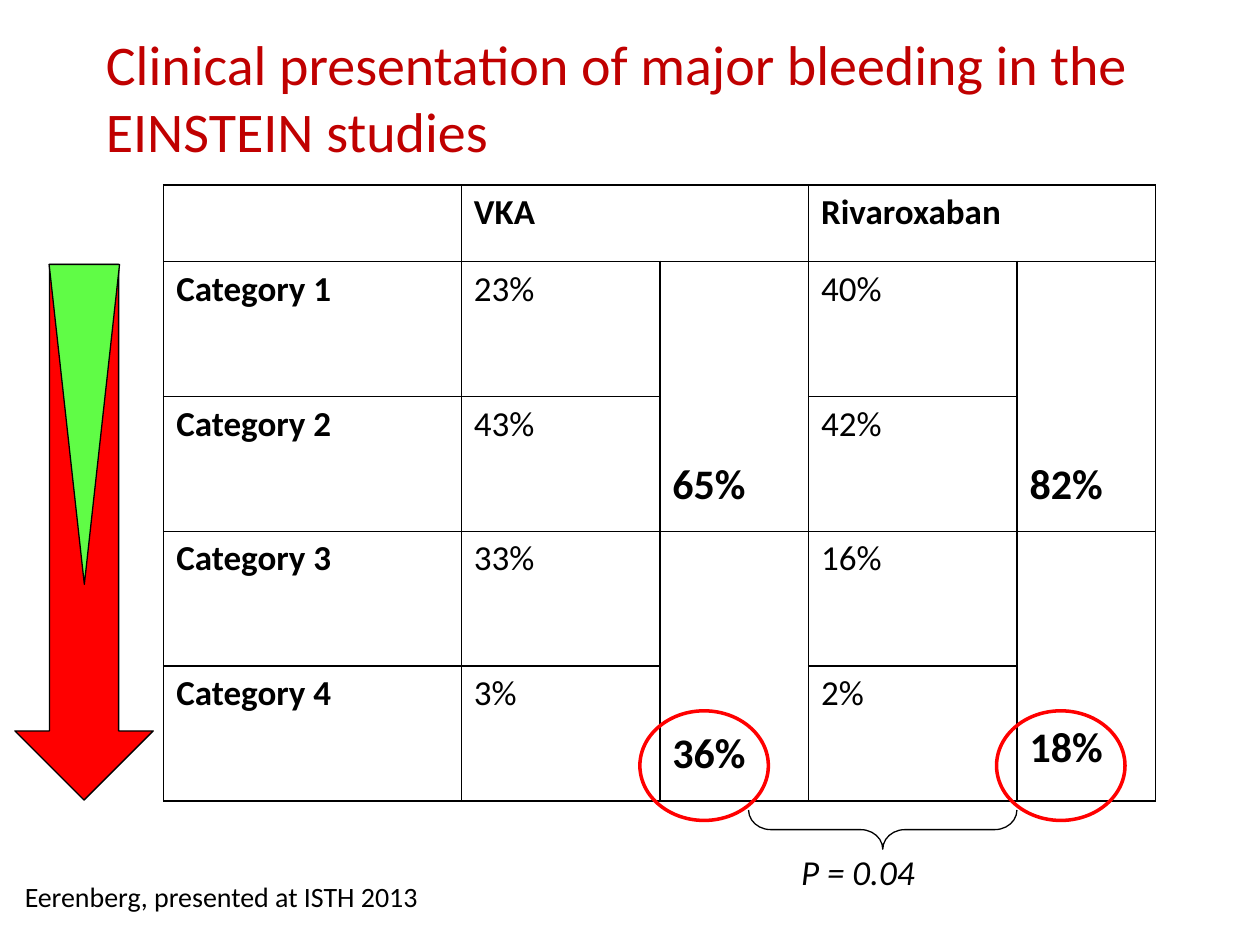
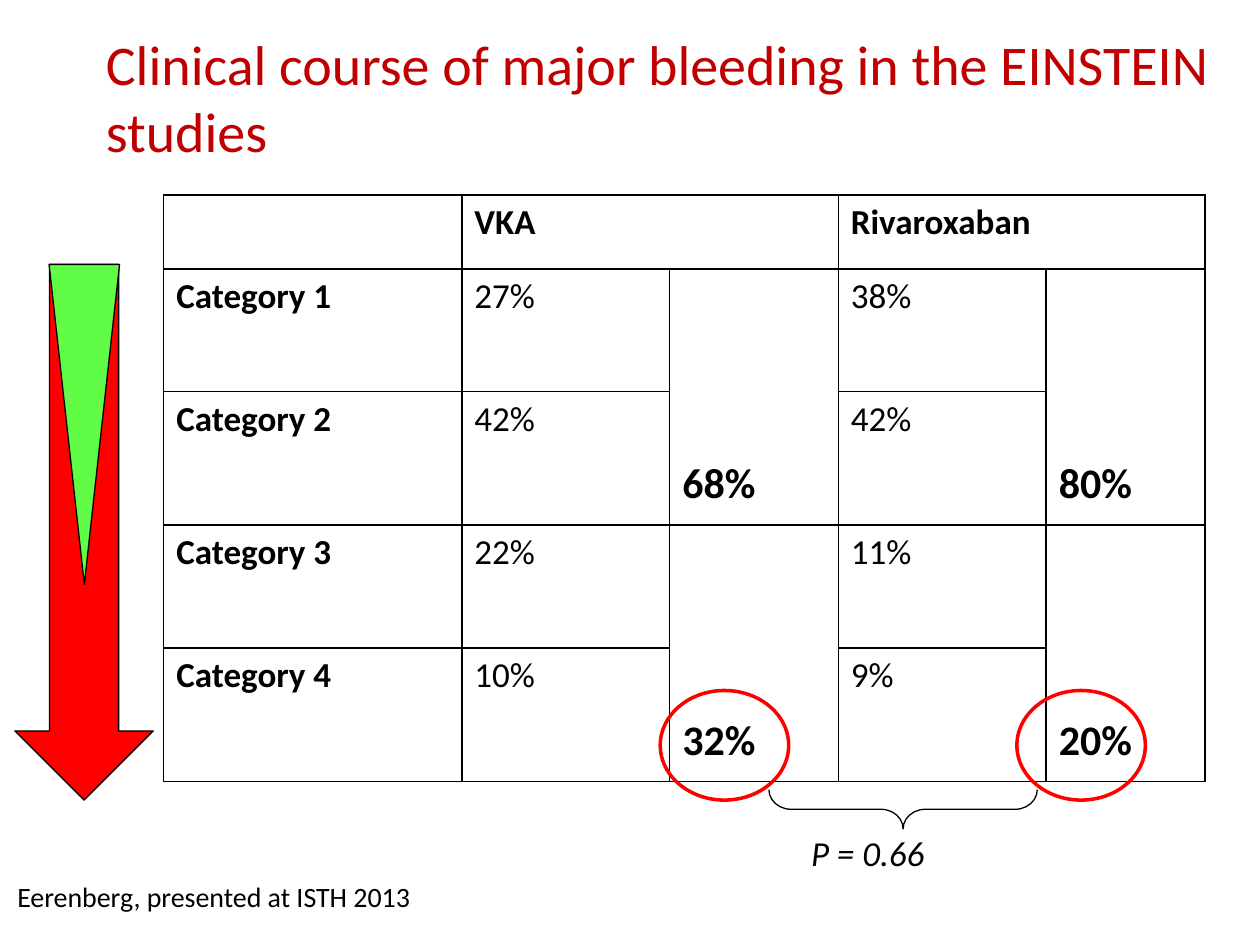
"""Build two slides comparing major bleeding categories in the EINSTEIN studies."""
from lxml import etree
from pptx import Presentation
from pptx.dml.color import RGBColor
from pptx.enum import shapes, text
from pptx.oxml import ns
from pptx.util import Cm, Pt

BLACK = RGBColor(0, 0, 0)
DARK_RED = RGBColor(0xC0, 0, 0)
RED = RGBColor(0xFF, 0, 0)
GREEN = RGBColor(0x60, 0xFC, 0x46)
FONT = "Calibri"
SHAPE = shapes.MSO_SHAPE

SOURCE = "Eerenberg, presented at ISTH 2013"
DRUGS = ("VKA", "Rivaroxaban")
SLIDES = [
    {
        "title": "Clinical presentation of major bleeding in the EINSTEIN studies",
        "shares": [("23%", "43%", "33%", "3%"), ("40%", "42%", "16%", "2%")],
        "totals": [("65%", "36%"), ("82%", "18%")],
        "total_gaps": [(0.42, 0.42), (0.42, 0.56)],
        "table_top": 3.73,
        "cols": (6, 4, 3, 4.2, 2.79),
        "rows": (1.54, 2.72, 2.72, 2.72, 2.72),
        "p_value": "P = 0.04",
        "p_at": (15.9, 17.02),
        "marks_at": (12.9, 14.33),
        "source_left": 0.25,
    },
    {
        "title": "Clinical course of major bleeding in the EINSTEIN studies",
        "shares": [("27%", "42%", "22%", "10%"), ("38%", "42%", "11%", "9%")],
        "totals": [("68%", "32%"), ("80%", "20%")],
        "total_gaps": [(0.3, 0.3), (0.3, 0.3)],
        "table_top": 3.93,
        "cols": (6.01, 4.19, 3.4, 4.19, 3.2),
        "rows": (1.49, 2.47, 2.69, 2.48, 2.69),
        "p_value": "P = 0.66",
        "p_at": (16.1, 16.64),
        "marks_at": (13.31, 13.92),
        "source_left": 0.1,
    },
]


def style(p, size, color=BLACK, bold=False, italic=False):
    f = p.font
    f.name, f.size, f.bold, f.italic = FONT, Pt(size), bold, italic
    f.color.rgb = color


def add_title(s, title):
    sp = s.shapes.title
    sp.left, sp.top, sp.width, sp.height = Cm(1.88), Cm(0.36), Cm(22.86), Cm(3.18)
    tf = sp.text_frame
    tf.text = title
    tf.auto_size = text.MSO_AUTO_SIZE.NONE
    tf.vertical_anchor = text.MSO_ANCHOR.MIDDLE
    p = tf.paragraphs[0]
    p.alignment = text.PP_ALIGN.LEFT
    style(p, 32, DARK_RED)


def add_label(s, words, left, top, width, size, italic=False):
    sp = s.shapes.add_textbox(Cm(left), Cm(top), Cm(width), Cm(1))
    tf = sp.text_frame
    tf.word_wrap = True
    tf.text = words
    style(tf.paragraphs[0], size, italic=italic)


def add_figure(parent, kind, box, line=BLACK, weight=0.75, fill=None):
    sp = parent.shapes.add_shape(kind, *(Cm(v) for v in box))
    sp.shadow.inherit = False
    if fill is None:
        sp.fill.background()
    else:
        sp.fill.solid()
        sp.fill.fore_color.rgb = fill
    sp.line.color.rgb = line
    sp.line.width = Pt(weight)
    return sp


def frame_cell(cell):
    cell.fill.background()
    pr = cell._tc.get_or_add_tcPr()
    for i, side in enumerate(("lnL", "lnR", "lnT", "lnB")):
        ln = etree.Element(ns.qn(f"a:{side}"), w=str(Pt(1)))
        fill = etree.SubElement(ln, ns.qn("a:solidFill"))
        etree.SubElement(fill, ns.qn("a:srgbClr"), val=str(BLACK))
        pr.insert(i, ln)


def write_cell(cell, words, size=20, bold=False):
    cell.text = words
    style(cell.text_frame.paragraphs[0], size, bold=bold)


def add_bleeding_table(s, d):
    rows, cols = d["rows"], d["cols"]
    frame = s.shapes.add_table(len(rows), len(cols), Cm(3.3), Cm(d["table_top"]),
                               Cm(sum(cols)), Cm(sum(rows)))
    tbl = frame.table
    tbl.first_row = tbl.horz_banding = False
    for col, width in zip(tbl.columns, cols):
        col.width = Cm(width)
    for row, height in zip(tbl.rows, rows):
        row.height = Cm(height)
    for cell in tbl.iter_cells():
        frame_cell(cell)
    for r in range(1, len(rows)):
        write_cell(tbl.cell(r, 0), f"Category {r}", bold=True)
    for i, drug in enumerate(DRUGS):
        c = 1 + 2 * i
        tbl.cell(0, c).merge(tbl.cell(0, c + 1))
        write_cell(tbl.cell(0, c), drug, bold=True)
        for r, share in enumerate(d["shares"][i], 1):
            write_cell(tbl.cell(r, c), share)
        for j, (total, gap) in enumerate(zip(d["totals"][i], d["total_gaps"][i])):
            r = 1 + 2 * j
            cell = tbl.cell(r, c + 1)
            cell.merge(tbl.cell(r + 1, c + 1))
            write_cell(cell, total, 24, True)
            cell.vertical_anchor = text.MSO_ANCHOR.BOTTOM
            cell.margin_bottom = Cm(gap)


def add_severity_arrow(s):
    group = s.shapes.add_group_shape()
    add_figure(group, SHAPE.DOWN_ARROW, (0.3, 5.33, 2.79, 10.8), fill=RED)
    wedge = add_figure(group, SHAPE.ISOSCELES_TRIANGLE, (0.99, 5.33, 1.42, 6.45), fill=GREEN)
    wedge.rotation = 180


def add_comparison(s, d):
    left, top = d["marks_at"]
    add_label(s, d["p_value"], *d["p_at"], 4.8, 20, italic=True)
    brace = add_figure(s, SHAPE.RIGHT_BRACE, (left + 4.5, top - 0.31, 0.79, 5.41))
    brace.rotation = 90
    brace.adjustments[0] = 0.564
    for x in (left, left + 7.19):
        add_figure(s, SHAPE.OVAL, (x, top, 2.59, 2.21), RED, 2)


def main():
    prs = Presentation()
    prs.slide_width, prs.slide_height = Cm(25.4), Cm(19.05)
    for d in SLIDES:
        s = prs.slides.add_slide(prs.slide_layouts[5])
        add_title(s, d["title"])
        add_bleeding_table(s, d)
        add_severity_arrow(s)
        add_comparison(s, d)
        add_label(s, SOURCE, d["source_left"], 17.6, 11.13, 16)
    prs.save("out.pptx")


if __name__ == "__main__":
    main()
